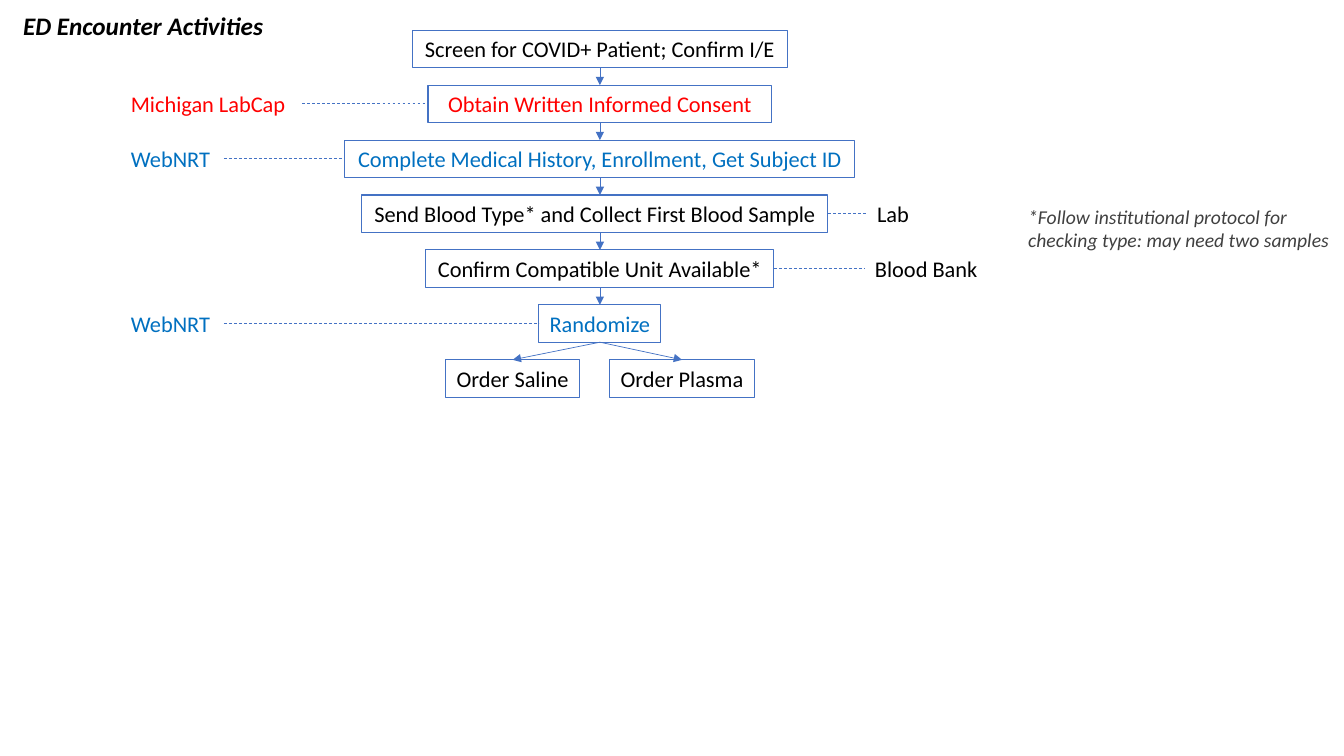
from dataclasses import dataclass
from typing import Optional

from lxml import etree
from pptx import Presentation
from pptx.dml.color import RGBColor
from pptx.enum import dml, shapes, text
from pptx.oxml import ns
from pptx.util import Inches, Pt

BLACK = "000000"
RED = "FF0000"
BLUE = "0070C0"
GRAY = "404040"
OUTLINE = "4472C4"
CENTER_X = 5.95
FIRST_TOP = 0.3
ROW_PITCH = 0.545
BOX_HEIGHT = 0.37


@dataclass
class Label:
    wording: str
    left: float
    width: float


@dataclass
class Step:
    wording: str
    width: float
    color: str = BLACK
    label: Optional[Label] = None
    wrap: bool = False
    center: float = CENTER_X

    @property
    def left(self) -> float:
        return self.center - self.width / 2


@dataclass
class Order:
    wording: str
    left: float
    width: float


STEPS = [
    Step("Screen for COVID+ Patient; Confirm I/E", 3.72),
    Step("Obtain Written Informed Consent", 3.41, RED,
         Label("Michigan LabCap", 1.2, 1.8), wrap=True),
    Step("Complete Medical History, Enrollment, Get Subject ID", 5.06, BLUE,
         Label("WebNRT", 1.2, 1.02)),
    Step("Send Blood Type* and Collect First Blood Sample", 4.62, BLACK,
         Label("Lab", 8.6, 0.52), wrap=True, center=5.9),
    Step("Confirm Compatible Unit Available*", 3.45, BLACK,
         Label("Blood Bank", 8.58, 1.23)),
    Step("Randomize", 1.21, BLUE, Label("WebNRT", 1.2, 1.02)),
]
ORDERS = [Order("Order Saline", 4.42, 1.33), Order("Order Plasma", 6.05, 1.43)]


def rgb(value: str) -> RGBColor:
    return RGBColor.from_string(value)


def write(shape, wording: str, color: str, size: int = 16, bold: bool = False,
          italic: bool = False, wrap: bool = False, centered: bool = False) -> None:
    frame = shape.text_frame
    frame.word_wrap = wrap
    frame.auto_size = text.MSO_AUTO_SIZE.SHAPE_TO_FIT_TEXT
    frame.vertical_anchor = text.MSO_ANCHOR.TOP
    paragraph = frame.paragraphs[0]
    paragraph.text = wording
    paragraph.alignment = text.PP_ALIGN.CENTER if centered else text.PP_ALIGN.LEFT
    font = paragraph.font
    font.name = "Calibri"
    font.size = Pt(size)
    font.bold = bold
    font.italic = italic
    font.color.rgb = rgb(color)


def add_text(slide, wording: str, left: float, top: float, width: float,
             height: float, color: str, **style) -> None:
    box = slide.shapes.add_textbox(
        Inches(left), Inches(top), Inches(width), Inches(height))
    write(box, wording, color, **style)


def add_box(slide, wording: str, left: float, top: float, width: float,
            color: str = BLACK, wrap: bool = False) -> None:
    box = slide.shapes.add_shape(
        shapes.MSO_SHAPE.RECTANGLE,
        Inches(left), Inches(top), Inches(width), Inches(BOX_HEIGHT))
    box.shadow.inherit = False
    box.fill.background()
    box.line.color.rgb = rgb(OUTLINE)
    box.line.width = Pt(0.75)
    write(box, wording, color, wrap=wrap, centered=True)


def add_line(slide, x1: float, y1: float, x2: float, y2: float,
             dashed: bool = False) -> None:
    connector = slide.shapes.add_connector(
        shapes.MSO_CONNECTOR.STRAIGHT,
        Inches(x1), Inches(y1), Inches(x2), Inches(y2))
    connector.line.color.rgb = rgb(OUTLINE)
    connector.line.width = Pt(0.5)
    if dashed:
        connector.line.dash_style = dml.MSO_LINE.DASH
    else:
        outline = connector.line._get_or_add_ln()
        etree.SubElement(outline, ns.qn("a:tailEnd"), type="triangle")
    etree.SubElement(connector._element.spPr, ns.qn("a:effectLst"))


def add_label(slide, step: Step, top: float) -> None:
    label = step.label
    add_text(slide, label.wording, label.left, top, label.width, BOX_HEIGHT, step.color)
    middle = top + BOX_HEIGHT / 2
    if label.left < step.left:
        start, end = label.left + label.width, step.left
    else:
        start, end = step.left + step.width, label.left
    add_line(slide, start, middle, end, middle, dashed=True)


def main() -> None:
    presentation = Presentation()
    presentation.slide_width = Inches(13.33)
    presentation.slide_height = Inches(7.5)
    slide = presentation.slides.add_slide(presentation.slide_layouts[6])

    add_text(slide, "ED Encounter Activities", 0.13, 0.05, 2.61, 0.4, BLACK,
             size=18, bold=True, italic=True)
    add_text(slide,
             "*Follow institutional protocol for checking type: may need two samples",
             10.1, 1.98, 3.23, 0.57, GRAY, size=14, italic=True, wrap=True)

    for row, step in enumerate(STEPS):
        top = FIRST_TOP + row * ROW_PITCH
        add_box(slide, step.wording, step.left, top, step.width, step.color, step.wrap)
        if row:
            add_line(slide, CENTER_X, top - ROW_PITCH + BOX_HEIGHT, CENTER_X, top)
        if step.label:
            add_label(slide, step, top)

    order_top = FIRST_TOP + len(STEPS) * ROW_PITCH
    for order in ORDERS:
        add_box(slide, order.wording, order.left, order_top, order.width)
        add_line(slide, CENTER_X, order_top - ROW_PITCH + BOX_HEIGHT,
                 order.left + order.width / 2, order_top)

    presentation.save("out.pptx")


if __name__ == "__main__":
    main()
